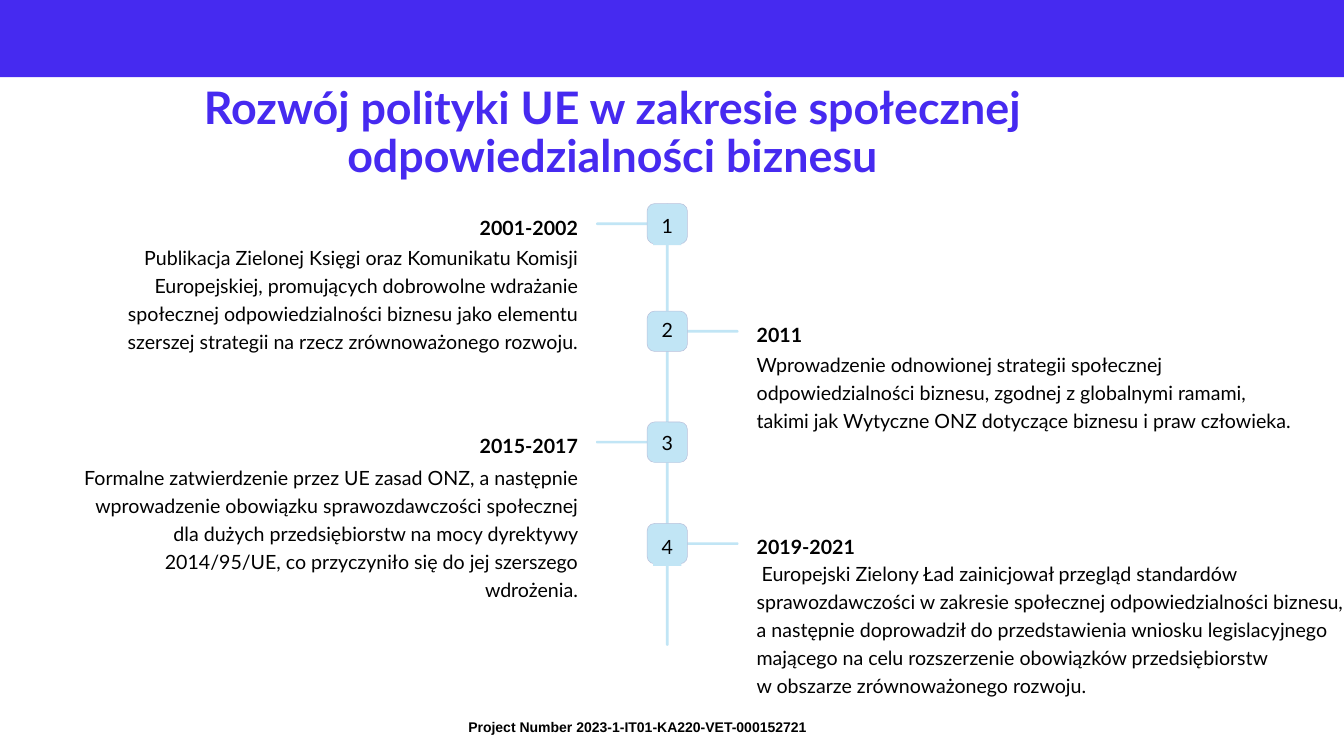
from dataclasses import dataclass

from pptx import Presentation
from pptx.dml.color import RGBColor
from pptx.enum.shapes import MSO_SHAPE
from pptx.enum.text import MSO_ANCHOR, PP_ALIGN
from pptx.util import Inches, Pt

RECTANGLE = MSO_SHAPE.RECTANGLE
ROUNDED = MSO_SHAPE.ROUNDED_RECTANGLE
LEFT, CENTER, RIGHT = PP_ALIGN.LEFT, PP_ALIGN.CENTER, PP_ALIGN.RIGHT
TOP, MIDDLE = MSO_ANCHOR.TOP, MSO_ANCHOR.MIDDLE

VIOLET = RGBColor(0x46, 0x2A, 0xF0)
PALE_BLUE = RGBColor(0xC1, 0xE5, 0xF5)
TILE_EDGE = RGBColor(0xBB, 0xC2, 0xDC)
BLACK = RGBColor(0, 0, 0)

TILE = 0.6
BAR = 0.04
BRANCH = 0.8
OVERLAP = 0.04


@dataclass
class Milestone:
    period: str
    description: str
    tile_top: float
    number_top: float
    period_top: float
    description_top: float
    description_width: float


MILESTONES = [
    Milestone(
        "2001-2002",
        "Publikacja Zielonej Księgi oraz Komunikatu Komisji Europejskiej, "
        "promujących dobrowolne wdrażanie społecznej odpowiedzialności biznesu "
        "jako elementu szerszej strategii na rzecz zrównoważonego rozwoju.",
        3.03, 3.12, 3.12, 3.6, 7.53),
    Milestone(
        "2011",
        "Wprowadzenie odnowionej strategii społecznej odpowiedzialności biznesu, "
        "zgodnej z globalnymi ramami, takimi jak Wytyczne ONZ dotyczące biznesu "
        "i praw człowieka.",
        4.63, 4.66, 4.72, 5.18, 8.07),
    Milestone(
        "2015-2017",
        "Formalne zatwierdzenie przez UE zasad ONZ, a następnie wprowadzenie "
        "obowiązku sprawozdawczości społecznej dla dużych przedsiębiorstw na mocy "
        "dyrektywy 2014/95/UE, co przyczyniło się do jej szerszego wdrożenia.",
        6.28, 6.35, 6.37, 6.87, 7.53),
    Milestone(
        "2019-2021",
        " Europejski Zielony Ład zainicjował przegląd standardów sprawozdawczości "
        "w zakresie społecznej odpowiedzialności biznesu, a następnie doprowadził "
        "do przedstawienia wniosku legislacyjnego mającego na celu rozszerzenie "
        "obowiązków przedsiębiorstw \nw obszarze zrównoważonego rozwoju.",
        7.79, 7.89, 7.88, 8.3, 8.74),
]


def write_text(shape, text, size=21, font="Lato", color=BLACK, bold=False,
               align=LEFT, anchor=TOP, spacing=Pt(30), margin=0, wrap=True):
    frame = shape.text_frame
    frame.word_wrap = wrap
    frame.vertical_anchor = anchor
    frame.margin_left = frame.margin_right = Inches(margin)
    frame.margin_top = frame.margin_bottom = Inches(margin / 2)
    paragraph = frame.paragraphs[0]
    paragraph.text = text
    paragraph.alignment = align
    paragraph.line_spacing = spacing
    for run in paragraph.runs:
        run.font.size = Pt(size)
        run.font.name = font
        run.font.bold = bold
        run.font.color.rgb = color


def add_text(slide, text, left, top, width, height, **text_format):
    box = slide.shapes.add_textbox(
        Inches(left), Inches(top), Inches(width), Inches(height))
    write_text(box, text, **text_format)


def add_block(slide, kind, left, top, width, height,
              fill=PALE_BLUE, edge=None, rounding=0.5):
    shape = slide.shapes.add_shape(
        kind, Inches(left), Inches(top), Inches(width), Inches(height))
    shape.shadow.inherit = False
    shape.fill.solid()
    shape.fill.fore_color.rgb = fill
    if edge is None:
        shape.line.fill.background()
    else:
        shape.line.color.rgb = edge
        shape.line.width = Pt(0.6)
    if kind == ROUNDED:
        shape.adjustments[0] = rounding
    return shape


def add_frame(slide, width):
    add_text(slide, "Project Number 2023-1-IT01-KA220-VET-000152721",
             6.87, 10.65, 5.31, 0.35, size=15, font="Arial", bold=True,
             spacing=1.0, margin=0.1, wrap=False)
    add_block(slide, RECTANGLE, 0, -0.02, width, 1.17, fill=VIOLET)
    add_text(slide,
             "Rozwój polityki UE w zakresie społecznej odpowiedzialności biznesu",
             0.49, 1.36, 17.25, 1.26, size=48, color=VIOLET, bold=True,
             align=CENTER, anchor=MIDDLE, spacing=0.9, margin=0.1)


def add_milestone(slide, number, milestone, center):
    on_left = number % 2 == 1
    tile_left = center - TILE / 2
    if on_left:
        branch_left = tile_left + OVERLAP - BRANCH
        text_edge = center - 1.33
        align = RIGHT
    else:
        branch_left = tile_left + TILE - OVERLAP
        text_edge = center + 1.33
        align = LEFT

    add_block(slide, ROUNDED, branch_left,
              milestone.tile_top + (TILE - BAR) / 2, BRANCH, BAR)
    add_block(slide, ROUNDED, tile_left, milestone.tile_top, TILE, TILE,
              edge=TILE_EDGE, rounding=0.187)
    label = add_block(slide, RECTANGLE, center - 0.21, milestone.number_top,
                      0.42, 0.53)
    write_text(label, str(number), align=CENTER)

    for text, top, width, height, bold, spacing in (
        (milestone.period, milestone.period_top, 3.51, 0.44, True, Pt(31.5)),
        (milestone.description, milestone.description_top,
         milestone.description_width, 1.28, False, Pt(30)),
    ):
        left = text_edge - width if on_left else text_edge
        add_text(slide, text, left, top, width, height,
                 bold=bold, align=align, spacing=spacing)


def add_timeline(slide, center, top, height):
    add_block(slide, ROUNDED, center - BAR / 2, top, BAR, height)
    for number, milestone in enumerate(MILESTONES, start=1):
        add_milestone(slide, number, milestone, center)


def main():
    presentation = Presentation()
    presentation.slide_width = Inches(20)
    presentation.slide_height = Inches(11.25)
    slide = presentation.slides.add_slide(presentation.slide_layouts[6])
    add_frame(slide, 20)
    add_timeline(slide, 9.93, 3.03, 6.58)
    presentation.save("out.pptx")


if __name__ == "__main__":
    main()
